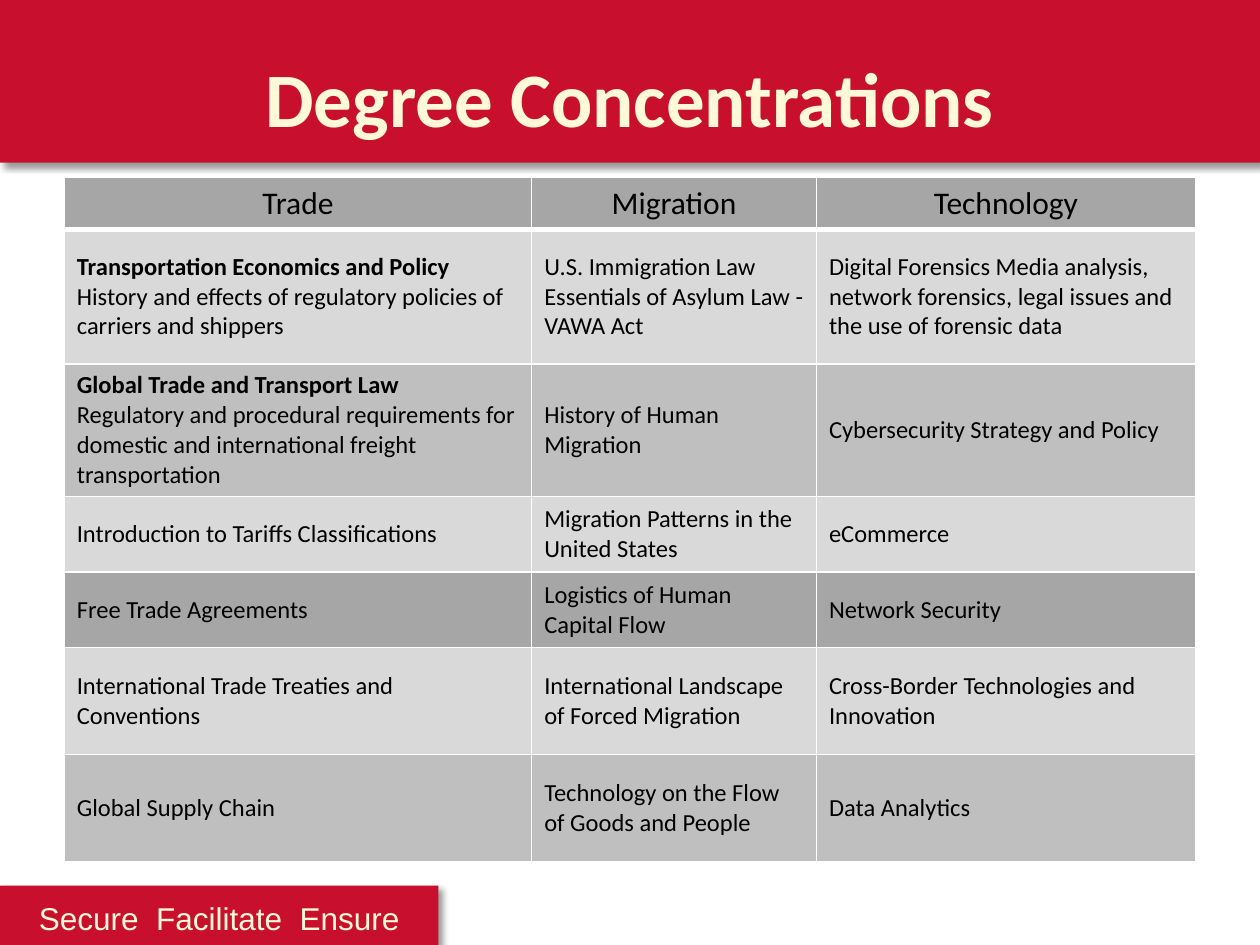
from dataclasses import dataclass

from lxml.etree import SubElement
from pptx import Presentation
from pptx.dml.color import RGBColor
from pptx.enum.shapes import MSO_SHAPE as Shape
from pptx.enum.text import MSO_ANCHOR as Anchor, PP_ALIGN as Align
from pptx.oxml import parse_xml
from pptx.oxml.ns import qn
from pptx.util import Inches, Pt

# Content
TITLE = "Degree Concentrations"
MOTTO = "Secure  Facilitate  Ensure"
HEADINGS = ["Trade", "Migration", "Technology"]
# A cell given as a tuple has a bold heading above its description
COURSES = [
    [("Transportation Economics and Policy",
      "History and effects of regulatory policies of carriers and shippers"),
     "U.S. Immigration Law\vEssentials of Asylum Law - VAWA Act",
     "Digital Forensics Media analysis, network forensics, legal issues and the use of forensic data"],
    [("Global Trade and Transport Law",
      "Regulatory and procedural requirements for domestic and international freight transportation"),
     "History of Human Migration",
     "Cybersecurity Strategy and Policy"],
    ["Introduction to Tariffs Classifications",
     "Migration Patterns in the United States",
     "eCommerce"],
    ["Free Trade Agreements",
     "Logistics of Human Capital Flow",
     "Network Security"],
    ["International Trade Treaties and Conventions",
     "International Landscape of Forced Migration",
     "Cross-Border Technologies and Innovation"],
    ["Global Supply Chain",
     "Technology on the Flow of Goods and People",
     "Data Analytics"],
]


@dataclass(frozen=True)
class Theme:
    red: str = "C8102E"
    cream: str = "FFF9D9"
    black: str = "000000"
    white: str = "FFFFFF"
    dark: str = "A6A6A6"
    middle: str = "BFBFBF"
    light: str = "D9D9D9"
    body_font: str = "Calibri"
    motto_font: str = "Arial"
    title_size: int = 44
    heading_size: int = 18
    body_size: int = 14
    rule: int = 1
    heading_rule: int = 3


THEME = Theme()

# Layout in inches
WIDTH, HEIGHT = 10, 7.5
HEADER_HEIGHT = 1.29
MOTTO_WIDTH, MOTTO_HEIGHT = 3.48, 0.47
TITLE_WIDTH = 8.62
COLUMNS = [3.71, 2.26, 3.01]
ROWS = [0.41, 1.07, 1.05, 0.6, 0.6, 0.85, 0.85]
ROW_FILLS = [THEME.dark, THEME.light, THEME.middle] + [THEME.light, THEME.dark, THEME.light, THEME.middle]
TABLE_TOP = 1.41


def style(paragraph, size, color, font=THEME.body_font, bold=False, align=Align.LEFT):
    paragraph.alignment = align
    for run in paragraph.runs:
        run.font.name, run.font.size, run.font.bold = font, Pt(size), bold
        run.font.color.rgb = RGBColor.from_string(color)


def add_band(slide, left, top, width, height):
    band = slide.shapes.add_shape(Shape.RECTANGLE, *map(Inches, (left, top, width, height)))
    band.fill.solid()
    band.fill.fore_color.rgb = RGBColor.from_string(THEME.red)
    band.line.fill.background()
    band.shadow.inherit = False
    effects = band._element.spPr.find(qn("a:effectLst"))
    shadow = SubElement(effects, qn("a:outerShdw"), blurRad=str(Pt(4)), dist=str(Pt(3)),
                        dir=str(45 * 60000), algn="tl", rotWithShape="0")
    color = SubElement(shadow, qn("a:srgbClr"), val=THEME.black)
    SubElement(color, qn("a:alpha"), val="40000")


def add_line(slide, text, box, anchor, spacing, **look):
    frame = slide.shapes.add_textbox(*map(Inches, box)).text_frame
    frame.word_wrap = True
    frame.vertical_anchor = anchor
    frame.text = text
    paragraph = frame.paragraphs[0]
    paragraph.line_spacing = spacing
    style(paragraph, color=THEME.cream, align=Align.CENTER, **look)


def set_borders(cell, bottom):
    properties = cell._tc.get_or_add_tcPr()
    for side in "LRTB":
        width = Pt(bottom if side == "B" else THEME.rule)
        properties.append(parse_xml(
            f'<a:ln{side} xmlns:a="http://schemas.openxmlformats.org/drawingml/2006/main" w="{width}">'
            f'<a:solidFill><a:srgbClr val="{THEME.white}"/></a:solidFill></a:ln{side}>'))


def fill_cell(cell, content, color, is_heading):
    parts = content if isinstance(content, tuple) else (content,)
    set_borders(cell, THEME.heading_rule if is_heading else THEME.rule)
    cell.fill.solid()
    cell.fill.fore_color.rgb = RGBColor.from_string(color)
    cell.vertical_anchor = Anchor.MIDDLE
    cell.text_frame.text = "\n".join(parts)
    for index, paragraph in enumerate(cell.text_frame.paragraphs):
        style(paragraph, THEME.heading_size if is_heading else THEME.body_size, THEME.black,
              bold=len(parts) > 1 and index == 0,
              align=Align.CENTER if is_heading else Align.LEFT)


def add_courses(slide):
    width = sum(COLUMNS)
    box = ((WIDTH - width) / 2, TABLE_TOP, width, sum(ROWS))
    table = slide.shapes.add_table(len(ROWS), len(COLUMNS), *map(Inches, box)).table
    table.first_row = table.horz_banding = False
    for column, size in zip(table.columns, COLUMNS):
        column.width = Inches(size)
    for index, (row, size, color, contents) in enumerate(
            zip(table.rows, ROWS, ROW_FILLS, [HEADINGS] + COURSES)):
        row.height = Inches(size)
        for cell, content in zip(row.cells, contents):
            fill_cell(cell, content, color, index == 0)


def main():
    presentation = Presentation()
    presentation.slide_width, presentation.slide_height = Inches(WIDTH), Inches(HEIGHT)
    slide = presentation.slides.add_slide(presentation.slide_layouts[6])

    # Header and footer bands
    motto_box = (0, HEIGHT - MOTTO_HEIGHT, MOTTO_WIDTH, MOTTO_HEIGHT)
    add_band(slide, 0, 0, WIDTH, HEADER_HEIGHT)
    add_band(slide, *motto_box)
    add_line(slide, MOTTO, motto_box, Anchor.TOP, 1.19,
             size=THEME.heading_size, font=THEME.motto_font)

    # Title and course table
    add_line(slide, TITLE, ((WIDTH - TITLE_WIDTH) / 2, 0.4, TITLE_WIDTH, 0.82), Anchor.MIDDLE, 0.9,
             size=THEME.title_size, bold=True)
    add_courses(slide)
    presentation.save("out.pptx")


if __name__ == "__main__":
    main()
